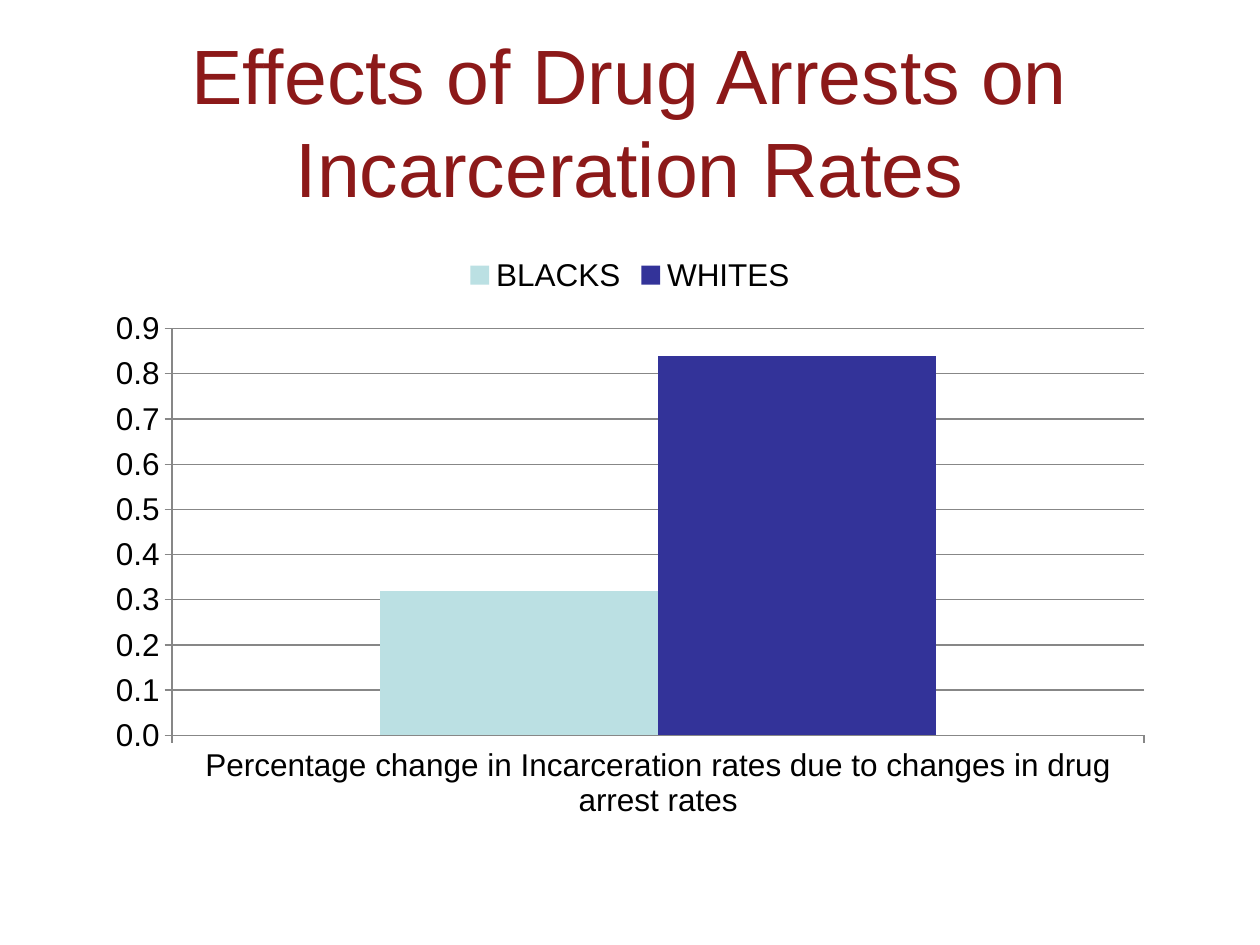
from pptx import Presentation
from pptx import util as u
from pptx.chart.data import CategoryChartData
from pptx.dml.color import RGBColor
from pptx.enum import chart as charts, text

FONT = "Arial"
COLORS = {"title": "8C1919", "text": "000000", "line": "878787",
          "BLACKS": "BBE0E3", "WHITES": "333399"}
RATES = {"BLACKS": 0.32, "WHITES": 0.84}
CATEGORY = "Percentage change in Incarceration rates due to changes in drug arrest rates"


def color(name):
    return RGBColor.from_string(COLORS[name])


def style_font(font, size, name):
    font.name = FONT
    font.size = u.Pt(size)
    font.color.rgb = color(name)


def style_line(line):
    line.color.rgb = color("line")
    line.width = u.Pt(0.75)


def set_title(page, wording):
    title = page.shapes.title
    title.left, title.top = u.Inches(0.75), u.Inches(0.33)
    title.width, title.height = u.Inches(8.5), u.Inches(1.25)
    frame = title.text_frame
    frame.text = wording
    frame.word_wrap = True
    frame.auto_size = text.MSO_AUTO_SIZE.NONE
    frame.vertical_anchor = text.MSO_ANCHOR.MIDDLE
    para = frame.paragraphs[0]
    para.alignment = text.PP_ALIGN.CENTER
    style_font(para.runs[0].font, 44, "title")


def add_rate_chart(page):
    data = CategoryChartData(number_format="General")
    data.categories = [CATEGORY]
    for group, rate in RATES.items():
        data.add_series(group, [rate])
    chart = page.shapes.add_chart(
        charts.XL_CHART_TYPE.COLUMN_CLUSTERED, u.Inches(0.75), u.Inches(1.92),
        u.Inches(8.5), u.Inches(4.67), data).chart
    style_font(chart.font, 18, "text")
    chart.has_title = False

    # Legend
    chart.has_legend = True
    chart.legend.position = charts.XL_LEGEND_POSITION.TOP
    chart.legend.include_in_layout = False

    # Columns
    plot = chart.plots[0]
    plot.gap_width = 150
    plot.vary_by_categories = False
    for series in plot.series:
        series.format.fill.solid()
        series.format.fill.fore_color.rgb = color(series.name)

    # Axes
    for axis in (chart.category_axis, chart.value_axis):
        axis.major_tick_mark = charts.XL_TICK_MARK.OUTSIDE
        axis.minor_tick_mark = charts.XL_TICK_MARK.NONE
        style_line(axis.format.line)
    values = chart.value_axis
    values.minimum_scale, values.maximum_scale, values.major_unit = 0, 0.9, 0.1
    values.has_major_gridlines = True
    style_line(values.major_gridlines.format.line)
    values.tick_labels.number_format = "#,##0.0"
    values.tick_labels.number_format_is_linked = False


def main():
    deck = Presentation()
    deck.slide_width, deck.slide_height = u.Inches(10), u.Inches(7.5)
    page = deck.slides.add_slide(deck.slide_layouts[5])
    set_title(page, "Effects of Drug Arrests on Incarceration Rates")
    add_rate_chart(page)
    deck.save("out.pptx")


if __name__ == "__main__":
    main()
